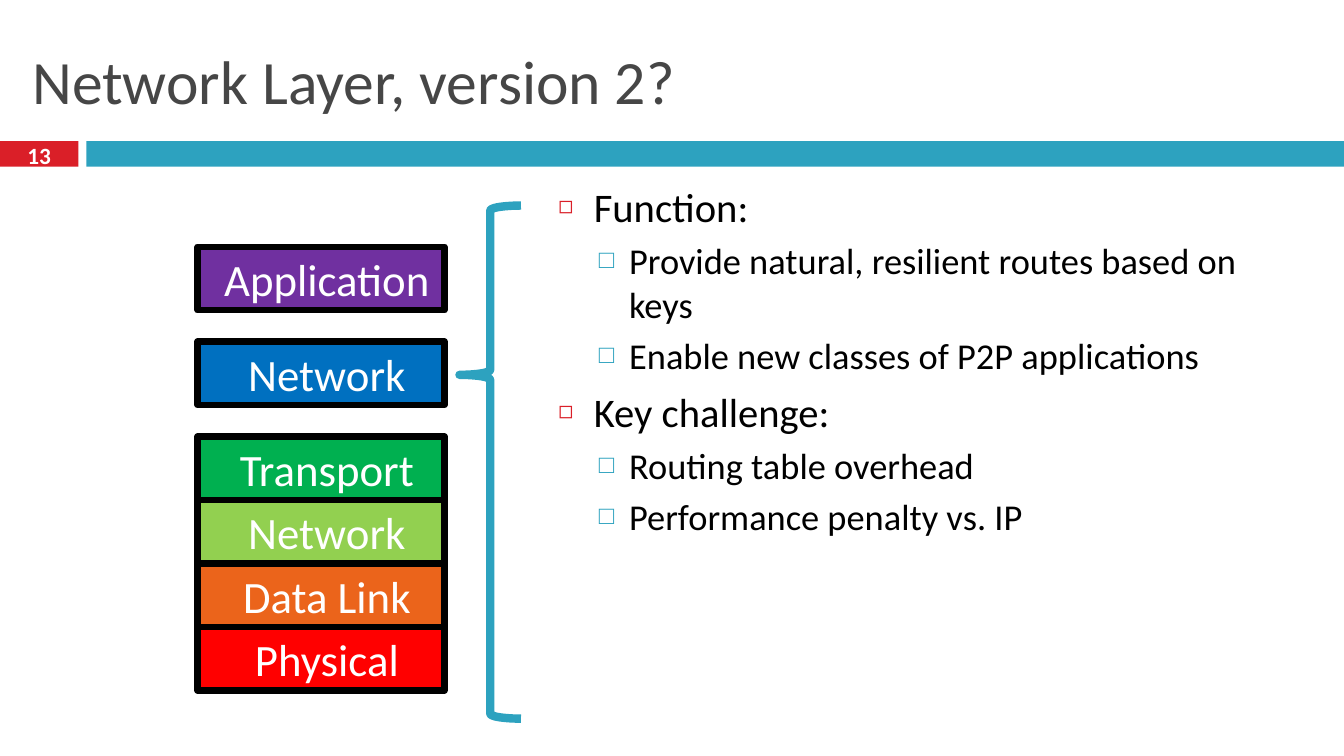
"""Build a slide on a second network layer: a protocol stack beside its notes."""
from dataclasses import dataclass

from lxml import etree
from pptx import Presentation
from pptx import util as u
from pptx.dml import color as col
from pptx.enum import shapes, text
from pptx.oxml import ns

RED, TEAL, BLACK, WHITE = "DA1F28", "2DA2BF", "000000", "FFFFFF"


@dataclass(frozen=True)
class Layer:
    name: str
    fill: str


@dataclass(frozen=True)
class Style:
    size: float
    before: float
    left: float
    hang: float
    mark: str
    tint: str
    scale: int


GROUPS = [
    [Layer("Application", "7030A0")],
    [Layer("Network", "0070C0")],
    [Layer("Transport", "00B050"), Layer("Network", "92D050"),
     Layer("Data Link", "EB641B"), Layer("Physical", "FF0000")],
]
STYLES = [
    Style(29, 7, 0.89, 0.89, "◻", RED, 60),
    Style(26, 5.5, 1.78, 0.76, "□", TEAL, 70),
]
NOTES = [
    (0, "Function:"),
    (1, "Provide natural, resilient routes based on keys"),
    (1, "Enable new classes of P2P applications"),
    (0, "Key challenge:"),
    (1, "Routing table overhead"),
    (1, "Performance penalty vs. IP"),
]


def paint(form, tone: str) -> None:
    """Give a fill, line or font fill a solid colour."""
    form.solid()
    form.fore_color.rgb = col.RGBColor.from_string(tone)


def place(item, left: float, top: float, width: float, height: float) -> None:
    """Move and size an item in centimetres."""
    item.left, item.top = u.Cm(left), u.Cm(top)
    item.width, item.height = u.Cm(width), u.Cm(height)


def write(para, words: str, *, size: float, tone: str, bold: bool = False,
          align=text.PP_ALIGN.LEFT, before: float = 0,
          left: float = 0, hang: float = 0) -> None:
    """Fill a paragraph with one formatted run."""
    run = para.add_run()
    run.text = words
    run.font.name, run.font.size, run.font.bold = "Calibri", u.Pt(size), bold
    paint(run.font.fill, tone)
    para.alignment, para.space_before = align, u.Pt(before)
    props = para._p.get_or_add_pPr()
    props.set("marL", str(u.Cm(left)))
    props.set("indent", str(-u.Cm(hang)))


def mark(para, style: Style) -> None:
    """Give a paragraph its bullet."""
    props = para._p.get_or_add_pPr()
    tint = etree.SubElement(props, ns.qn("a:buClr"))
    etree.SubElement(tint, ns.qn("a:srgbClr"), val=style.tint)
    etree.SubElement(props, ns.qn("a:buSzPct"), val=str(style.scale * 1000))
    etree.SubElement(props, ns.qn("a:buChar"), char=style.mark)


def block(slide, fill: str, left: float, top: float, width: float, height: float):
    """Add a plain filled rectangle."""
    box = slide.shapes.add_shape(shapes.MSO_SHAPE.RECTANGLE, 0, 0, 0, 0)
    place(box, left, top, width, height)
    box.shadow.inherit = False
    paint(box.fill, fill)
    box.line.fill.background()
    return box


def stack(slide) -> None:
    """Draw the layer boxes, with a gap between groups."""
    top, height, gap = 6.22, 1.6, 0.79
    for group in GROUPS:
        for layer in group:
            box = block(slide, layer.fill, 4.98, top, 6.22, height)
            paint(box.line.fill, BLACK)
            box.line.width = u.Pt(4.5)
            box.text_frame.vertical_anchor = text.MSO_ANCHOR.MIDDLE
            write(box.text_frame.paragraphs[0], layer.name, size=32, tone=WHITE,
                  align=text.PP_ALIGN.CENTER, before=6.4, left=0.3)
            top += height
        top += gap


def brace(slide) -> None:
    """Draw the brace from the upper network layer to the notes."""
    curl = slide.shapes.add_shape(shapes.MSO_SHAPE.LEFT_BRACE, 0, 0, 0, 0)
    place(curl, 11.58, 5.18, 1.55, 12.93)
    curl.adjustments[0], curl.adjustments[1] = 0.08, 0.33
    curl.shadow.inherit = False
    curl.fill.background()
    paint(curl.line.fill, TEAL)
    curl.line.width = u.Pt(6)


def head(slide) -> None:
    """Set the title, the page number and the bars."""
    block(slide, TEAL, 2.18, 3.56, 31.69, 0.64)
    block(slide, RED, 0, 3.56, 1.98, 0.64)
    title = slide.shapes.title
    place(title, 0.56, 0.64, 32.74, 2.74)
    title.text_frame.vertical_anchor = text.MSO_ANCHOR.MIDDLE
    write(title.text_frame.paragraphs[0], "Network Layer, version 2?",
          size=44, tone="464646")
    page = slide.shapes.add_textbox(0, 0, 0, 0)
    place(page, 0, 3.48, 1.98, 0.84)
    frame = page.text_frame
    frame.word_wrap = True
    frame.vertical_anchor = text.MSO_ANCHOR.MIDDLE
    write(frame.paragraphs[0], "13", size=16.6, tone=WHITE, bold=True,
          align=text.PP_ALIGN.CENTER)


def notes(slide) -> None:
    """Fill the body with the two-level list."""
    body = slide.placeholders[1]
    place(body, 13.82, 4.45, 19.23, 14.17)
    frame = body.text_frame
    for row, (level, words) in enumerate(NOTES):
        para = frame.add_paragraph() if row else frame.paragraphs[0]
        style = STYLES[level]
        para.level = level
        write(para, words, size=style.size, tone=BLACK, before=style.before,
              left=style.left, hang=style.hang)
        mark(para, style)


def main() -> None:
    """Build and save the slide."""
    deck = Presentation()
    deck.slide_width, deck.slide_height = u.Cm(33.87), u.Cm(19.05)
    slide = deck.slides.add_slide(deck.slide_layouts[1])
    head(slide)
    notes(slide)
    stack(slide)
    brace(slide)
    deck.save("out.pptx")


if __name__ == "__main__":
    main()
